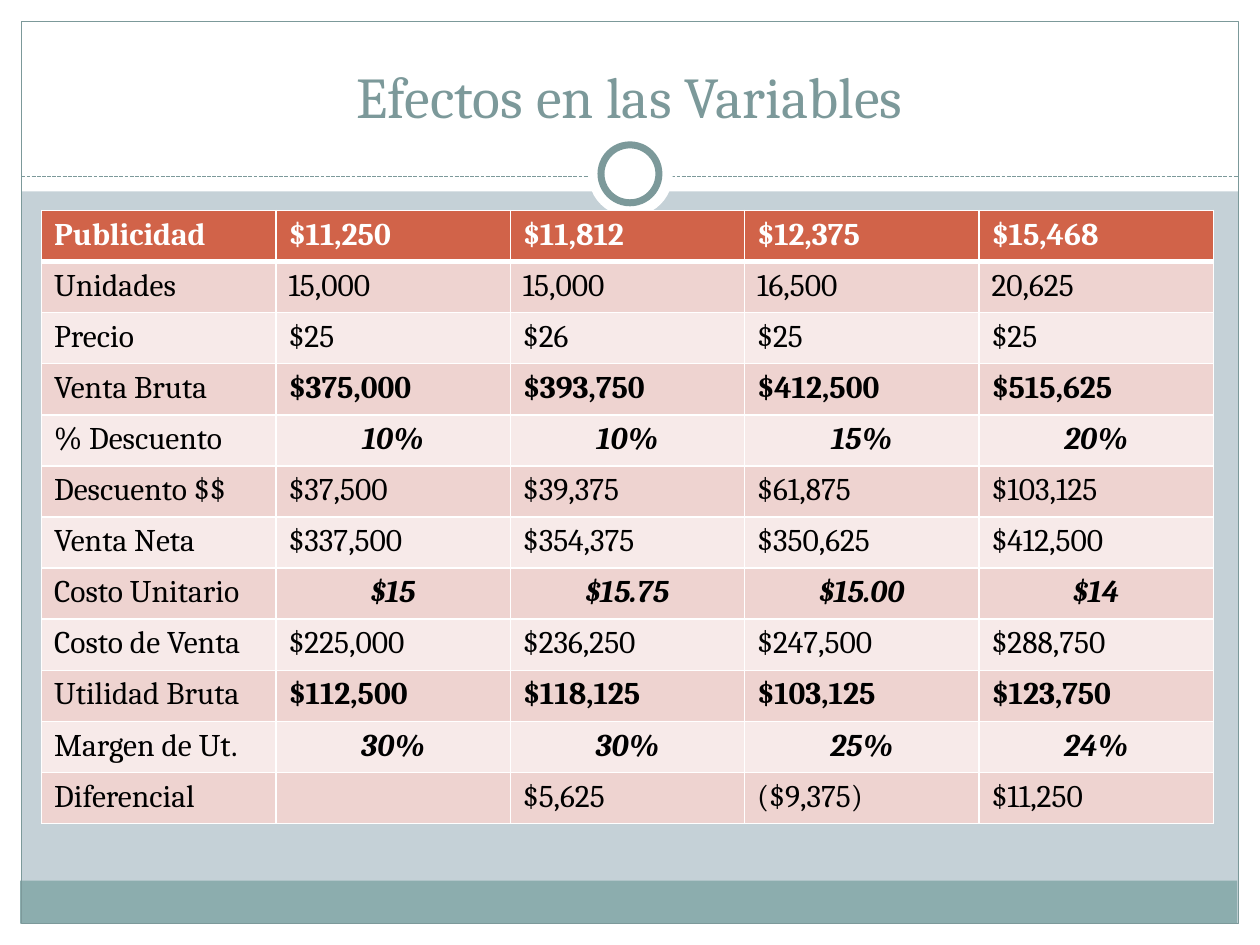
from lxml import etree
from pptx import Presentation
from pptx.dml.color import RGBColor
from pptx.enum.dml import MSO_LINE
from pptx.enum.shapes import MSO_CONNECTOR, MSO_SHAPE
from pptx.enum.text import MSO_ANCHOR, MSO_AUTO_SIZE, PP_ALIGN
from pptx.oxml.ns import qn
from pptx.util import Inches, Pt

WHITE = RGBColor(0xFF, 0xFF, 0xFF)
BLACK = RGBColor(0x00, 0x00, 0x00)
SKY = RGBColor(0xC5, 0xD1, 0xD7)
TEAL = RGBColor(0x8C, 0xAD, 0xAE)
SLATE = RGBColor(0x7C, 0x99, 0x9A)
RUST = RGBColor(0xD1, 0x63, 0x49)
ROSE = RGBColor(0xEE, 0xD3, 0xD0)
BLUSH = RGBColor(0xF7, 0xEA, 0xE9)
FONT = "Cambria"

ROWS = [
    ("Publicidad", "$11,250", "$11,812", "$12,375", "$15,468"),
    ("Unidades", "15,000", "15,000", "16,500", "20,625"),
    ("Precio", "$25", "$26", "$25", "$25"),
    ("Venta Bruta", "$375,000", "$393,750", "$412,500", "$515,625"),
    ("% Descuento", "10%", "10%", "15%", "20%"),
    ("Descuento $$", "$37,500", "$39,375", "$61,875", "$103,125"),
    ("Venta Neta", "$337,500", "$354,375", "$350,625", "$412,500"),
    ("Costo Unitario", "$15", "$15.75", "$15.00", "$14"),
    ("Costo de Venta", "$225,000", "$236,250", "$247,500", "$288,750"),
    ("Utilidad Bruta", "$112,500", "$118,125", "$103,125", "$123,750"),
    ("Margen de Ut.", "30%", "30%", "25%", "24%"),
    ("Diferencial", "", "$5,625", "($9,375)", "$11,250"),
]
TOTALS = {"Venta Bruta", "Utilidad Bruta"}
RATIOS = {"% Descuento", "Costo Unitario", "Margen de Ut."}


def add_shape(kind, box, fill=None, line=None, width=0.75):
    sp = s.shapes.add_shape(kind, *[Inches(v) for v in box])
    sp.shadow.inherit = False
    if fill is None:
        sp.fill.background()
    else:
        sp.fill.solid()
        sp.fill.fore_color.rgb = fill
    if line is None:
        sp.line.fill.background()
    else:
        sp.line.color.rgb = line
        sp.line.width = Pt(width)


def set_border(cell, side, width):
    ln = etree.SubElement(cell._tc.get_or_add_tcPr(), qn(f"a:ln{side}"), w=str(Pt(width)))
    fill = etree.SubElement(ln, qn("a:solidFill"))
    etree.SubElement(fill, qn("a:srgbClr"), val=str(WHITE))


prs = Presentation()
prs.slide_width, prs.slide_height = Inches(10), Inches(7.5)
s = prs.slides.add_slide(prs.slide_layouts[5])
s.background.fill.solid()
s.background.fill.fore_color.rgb = SKY

for box in [(0, 7.33, 10, 0.17), (0, 0, 10, 1.52), (0, 0, 0.17, 7.5), (9.83, 0, 0.17, 7.5)]:
    add_shape(MSO_SHAPE.RECTANGLE, box, WHITE)
add_shape(MSO_SHAPE.RECTANGLE, (0.16, 6.99, 9.66, 0.34), TEAL)
add_shape(MSO_SHAPE.RECTANGLE, (0.17, 0.17, 9.66, 7.16), line=SLATE)

divider = s.shapes.add_connector(
    MSO_CONNECTOR.STRAIGHT, Inches(0.17), Inches(1.4), Inches(9.83), Inches(1.4))
divider.line.color.rgb = SLATE
divider.line.width = Pt(0.75)
divider.line.dash_style = MSO_LINE.SQUARE_DOT
etree.SubElement(divider._element.spPr, qn("a:effectLst"))

add_shape(MSO_SHAPE.OVAL, (4.67, 1.05, 0.67, 0.67), WHITE)
add_shape(MSO_SHAPE.OVAL, (4.77, 1.15, 0.46, 0.46), WHITE, SLATE, 4)

title = s.shapes.title
title.left, title.top = Inches(0.33), Inches(0.25)
title.width, title.height = Inches(9.33), Inches(0.83)
title.element.getparent().append(title.element)
tf = title.text_frame
tf.text = "Efectos en las Variables"
tf.auto_size = MSO_AUTO_SIZE.NONE
tf.vertical_anchor = MSO_ANCHOR.BOTTOM
p = tf.paragraphs[0]
p.alignment = PP_ALIGN.CENTER
r = p.runs[0]
r.font.name, r.font.size = FONT, Pt(33)
r.font.color.rgb = SLATE

table = s.shapes.add_table(
    len(ROWS), len(ROWS[0]), Inches(0.33), Inches(1.67), Inches(9.3), Inches(4.87)).table
for i, row in enumerate(ROWS):
    header = i == 0
    for j, text in enumerate(row):
        cell = table.cell(i, j)
        for side in "LRTB":
            thick = (i, side) in [(0, "B"), (1, "T")]
            set_border(cell, side, 3 if thick else 1)
        cell.fill.solid()
        cell.fill.fore_color.rgb = RUST if header else ROSE if i % 2 else BLUSH
        cell.text = text
        ratio = j > 0 and row[0] in RATIOS
        total = j > 0 and row[0] in TOTALS
        p = cell.text_frame.paragraphs[0]
        p.alignment = PP_ALIGN.CENTER if ratio else PP_ALIGN.LEFT
        for r in p.runs:
            r.font.name, r.font.size = FONT, Pt(18)
            r.font.bold = header or ratio or total
            r.font.italic = ratio
            r.font.color.rgb = WHITE if header else BLACK

prs.save("out.pptx")
